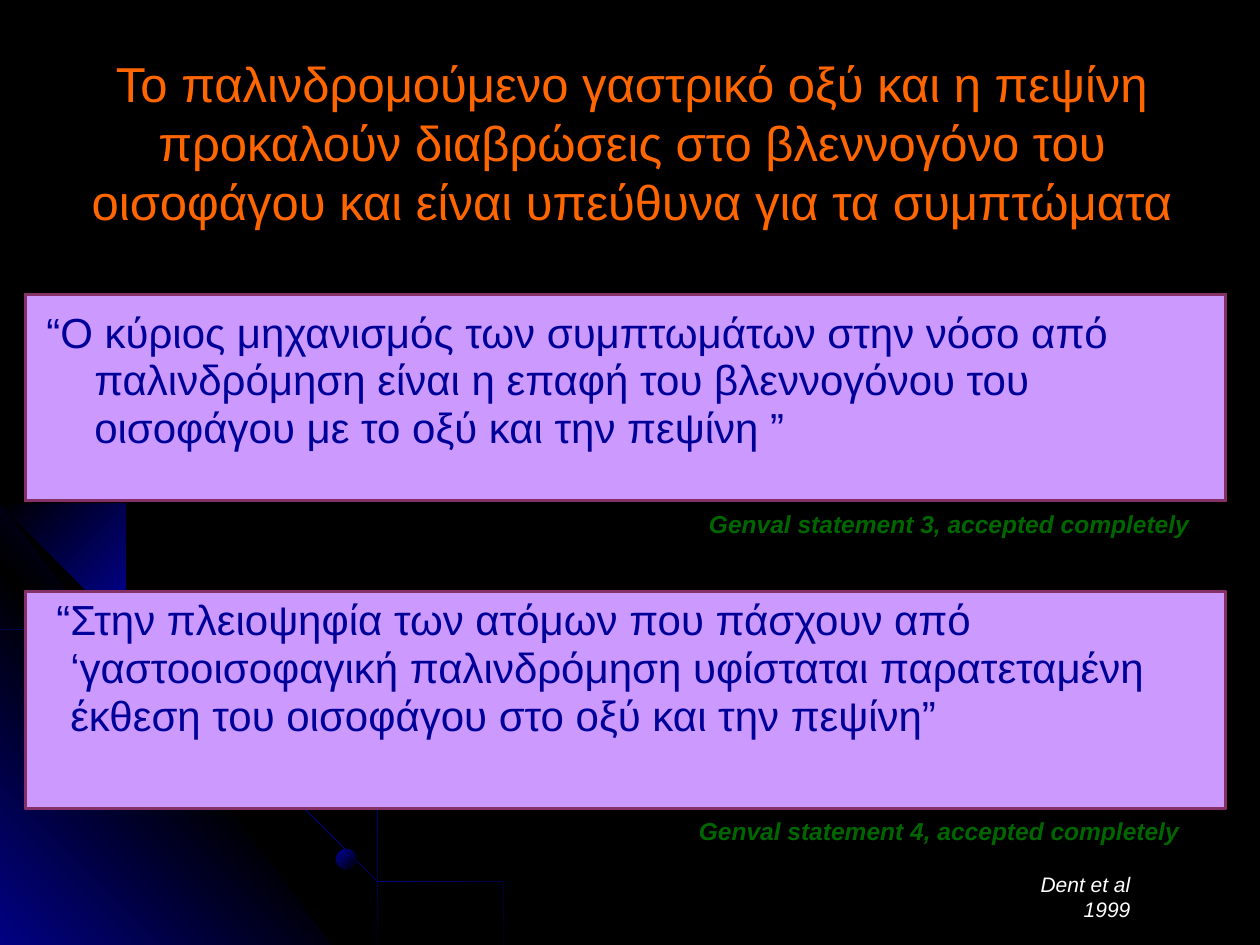
import math

from lxml import etree
from pptx import Presentation
from pptx.dml.color import RGBColor
from pptx.enum.shapes import MSO_SHAPE
from pptx.enum.text import MSO_ANCHOR, PP_ALIGN
from pptx.oxml.ns import qn
from pptx.util import Inches, Pt

BEVEL, OVAL = MSO_SHAPE.BEVEL, MSO_SHAPE.OVAL
TOP, MIDDLE = MSO_ANCHOR.TOP, MSO_ANCHOR.MIDDLE
LEFT, CENTER, RIGHT = PP_ALIGN.LEFT, PP_ALIGN.CENTER, PP_ALIGN.RIGHT

BLACK, BLUE, NAVY, GREEN = "000000", "010199", "000099", "006600"
ORANGE, LILAC, PLUM, WHITE = "FF6600", "CC99FF", "853167", "FFFFFF"

COLS, ROWS = 10, 7.5
prs = Presentation()
prs.slide_width, prs.slide_height = Inches(COLS), Inches(ROWS)
U = prs.slide_width // COLS  # one grid column, also one grid row
rgb = RGBColor.from_string

s = prs.slides.add_slide(prs.slide_layouts[6])
s.background.fill.solid()
s.background.fill.fore_color.rgb = rgb(BLACK)


def shade(sp, colors, angle):
    """Fill with evenly spaced gradient stops; the angle runs clockwise."""
    sp.shadow.inherit = False
    sp.line.fill.background()
    sp.fill.gradient()
    sp.fill.gradient_angle = 360 - angle
    stops = sp._element.spPr.find(qn("a:gradFill")).find(qn("a:gsLst"))
    for stop in list(stops):
        stops.remove(stop)
    for i, color in enumerate(colors):
        pos = 100000 * i // (len(colors) - 1)
        stop = etree.SubElement(stops, qn("a:gs"), pos=str(pos))
        etree.SubElement(stop, qn("a:srgbClr"), val=color)


def add_text(box, text, size, color, align=LEFT, anchor=TOP, bold=False,
             italic=False, hang=0, spacing=None):
    tf = s.shapes.add_textbox(*[int(v * U) for v in box]).text_frame
    tf.word_wrap = True
    tf.vertical_anchor = anchor
    p = tf.paragraphs[0]
    p.alignment = align
    p.line_spacing = spacing
    if hang:
        pPr = p._p.get_or_add_pPr()
        pPr.set("marL", str(int(hang * U)))
        pPr.set("indent", str(-int(hang * U)))
    r = p.add_run()
    r.text = text
    r.font.name, r.font.size = "Arial", Pt(size)
    r.font.bold, r.font.italic = bold, italic
    r.font.color.rgb = rgb(color)


# Glow: a triangle in the bottom left corner
GLOW_SIDE = 3.23
fb = s.shapes.build_freeform(0, ROWS - GLOW_SIDE, scale=U)
fb.add_line_segments([(GLOW_SIDE, ROWS), (0, ROWS)], close=True)
shade(fb.convert_to_shape(), [BLUE, BLACK, BLUE], 135)

# Orbits: thin circular bands from the left edge to the bottom edge
BAND, STEPS = 0.03, 24
for start_y, end_x, radius in [(4.35, 3.72, 4.58), (4.75, 3.03, 4.5), (4.42, 3.03, 4.57)]:
    # The centre lies on the chord's perpendicular, towards the bottom left
    rise = ROWS - start_y
    chord = math.hypot(end_x, rise)
    offset = math.sqrt(radius ** 2 - chord ** 2 / 4) / chord
    cx = end_x / 2 - offset * rise
    cy = start_y + rise / 2 + offset * end_x
    first = math.atan2(start_y - cy, -cx)
    last = math.atan2(ROWS - cy, end_x - cx)
    angles = [first + (last - first) * i / STEPS for i in range(STEPS + 1)]
    outer = [(cx + radius * math.cos(a), cy + radius * math.sin(a)) for a in angles]
    inner = [(cx + (radius - BAND) * math.cos(a), cy + (radius - BAND) * math.sin(a))
             for a in reversed(angles)]
    fb = s.shapes.build_freeform(*outer[0], scale=U)
    fb.add_line_segments(outer[1:] + inner, close=True)
    shade(fb.convert_to_shape(), [BLACK, BLUE, BLUE, BLUE, BLACK], 225)

planet = s.shapes.add_shape(OVAL, *[int(v * U) for v in (2.67, 6.74, 0.16, 0.16)])
shade(planet, [BLACK, BLUE], 225)

add_text((0.35, 0.28, 9.33, 1.69),
         "Το παλινδρομούμενο γαστρικό οξύ και η πεψίνη προκαλούν διαβρώσεις στο "
         "βλεννογόνο του οισοφάγου και είναι υπεύθυνα για τα συμπτώματα",
         28, ORANGE, CENTER, MIDDLE)

# Statements: number, panel top and height, text left, top and hang, caption left, quote
statements = [
    (3, 2.33, 1.65, 0.27, 2.41, 0.38, 4.84,
     "“Ο κύριος μηχανισμός των συμπτωμάτων στην νόσο από παλινδρόμηση είναι η "
     "επαφή του βλεννογόνου του οισοφάγου με το οξύ και την πεψίνη ”"),
    (4, 4.69, 1.73, 0.35, 4.69, 0.11, 4.76,
     "“Στην πλειοψηφία των ατόμων που πάσχουν από ‘γαστοοισοφαγική παλινδρόμηση "
     "υφίσταται παρατεταμένη έκθεση του οισοφάγου στο οξύ και την πεψίνη”"),
]
for number, top, height, text_left, text_top, hang, caption_left, quote in statements:
    bottom = top + height
    panel = s.shapes.add_shape(BEVEL, *[int(v * U) for v in (0.2, top, 9.53, height)])
    panel.adjustments[0] = 0.006
    panel.shadow.inherit = False
    panel.fill.solid()
    panel.fill.fore_color.rgb = rgb(LILAC)
    panel.line.color.rgb = rgb(PLUM)
    panel.line.width = Pt(1)
    add_text((text_left, text_top, 9.37, bottom - text_top), quote, 24, NAVY,
             hang=hang, spacing=0.95)
    add_text((caption_left, bottom + 0.01, 4.7, 0.33),
             f"Genval statement {number}, accepted completely",
             14, GREEN, RIGHT, bold=True, italic=True)

add_text((7.89, 6.87, 1.18, 0.3), "Dent et al 1999", 12, WHITE, RIGHT, italic=True)

prs.save("out.pptx")
